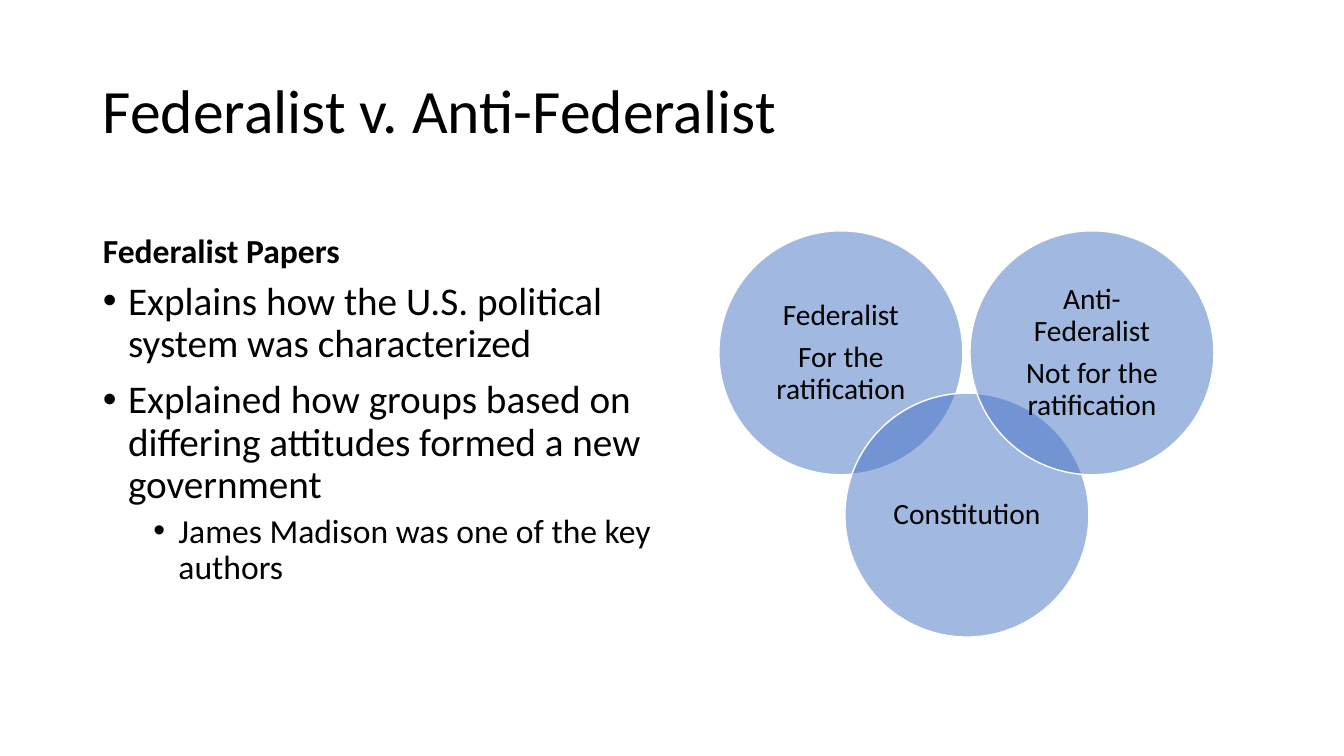
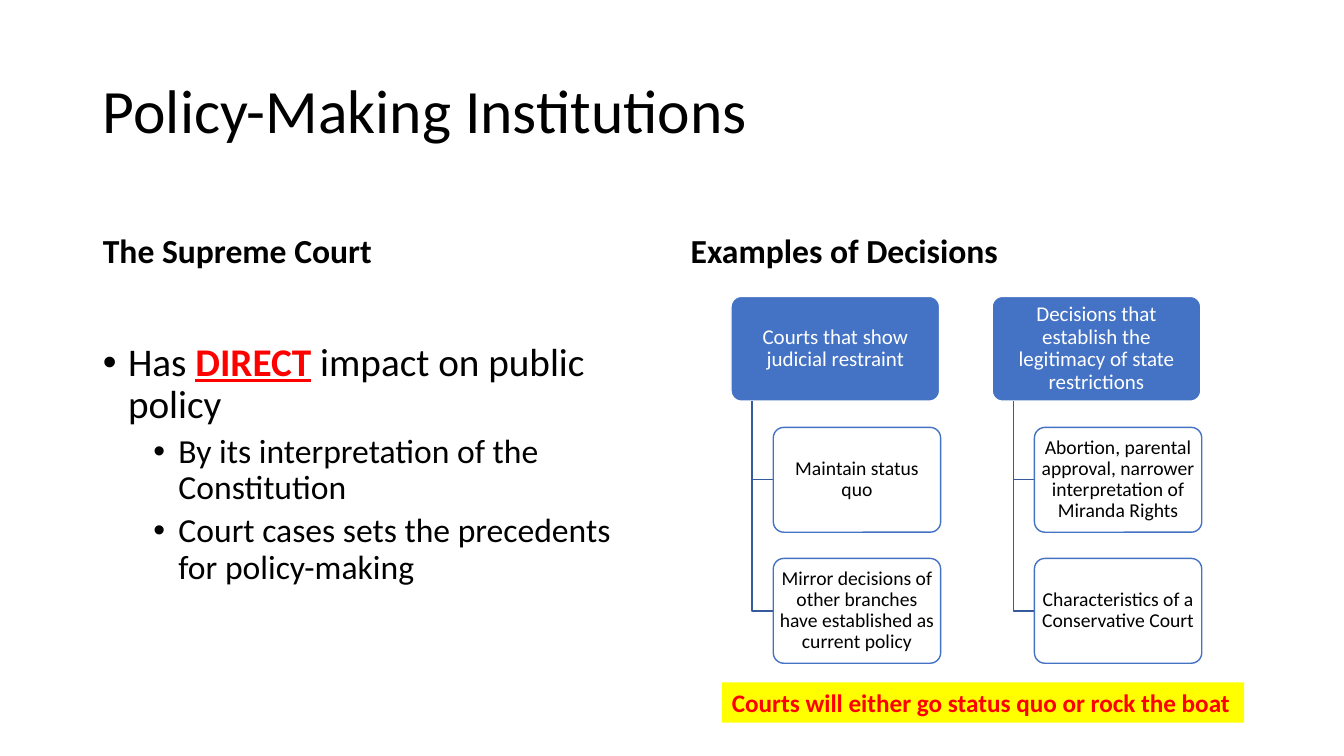
from lxml.etree import SubElement
from pptx import Presentation
from pptx.dml.color import RGBColor
from pptx.enum.shapes import MSO_SHAPE
from pptx.enum.text import MSO_ANCHOR, MSO_AUTO_SIZE, PP_ALIGN
from pptx.oxml.ns import qn
from pptx.util import Pt

PX = 9144  # EMU in one px, 100 px to the inch
BLUE, NAVY, WHITE, BLACK = "4472C4", "365B9D", "FFFFFF", "000000"
RED, YELLOW = "FF0000", "FFFF00"
FONT = "Calibri"

TITLE, HEAD, LIST, HEAD2 = range(4)  # placeholder numbers of the layout
PLACES = {
    TITLE: (92, 40, 1150, 145),
    HEAD: (92, 184, 564, 90),
    LIST: (92, 274, 564, 403),
    HEAD2: (675, 184, 567, 90),
}
LEVELS = [  # size, space before, indent of each list level
    {"size": 28, "before": 10, "left": 25},
    {"size": 24, "before": 5, "left": 75},
]
HANG = 25


def color(code):
    return RGBColor.from_string(code)


def assign(item, values):
    for name, value in values.items():
        setattr(item, name, value)


def move(shape, box):
    sides = ("left", "top", "width", "height")
    assign(shape, {side: n * PX for side, n in zip(sides, box)})


def write(para, text, size, ink=BLACK, **style):
    run = para.add_run()
    run.text = text
    assign(run.font, {"name": FONT, "size": Pt(size), **style})
    run.font.color.rgb = color(ink)


def bullet(para, left):
    props = para._p.get_or_add_pPr()
    props.set("marL", str(left * PX))
    props.set("indent", str(-HANG * PX))
    SubElement(props, qn("a:buFont"), typeface="Arial")
    SubElement(props, qn("a:buChar"), char="•")


def label(slide, number, text, size, **style):
    """Fill a one-line title or heading placeholder."""
    frame = slide.placeholders[number].text_frame
    frame.auto_size = MSO_AUTO_SIZE.NONE
    para = frame.paragraphs[0]
    assign(para, {"alignment": PP_ALIGN.LEFT, "line_spacing": 0.9,
                  "space_before": Pt(0)})
    write(para, text, size, **style)


def fill_list(slide, items, top):
    """Fill the list with (level, runs), each run a text and its style."""
    holder = slide.placeholders[LIST]
    left, start, width, height = PLACES[LIST]
    move(holder, (left, top, width, start + height - top))
    frame = holder.text_frame
    frame.auto_size = MSO_AUTO_SIZE.NONE
    for n, (level, runs) in enumerate(items):
        para = frame.add_paragraph() if n else frame.paragraphs[0]
        rule = LEVELS[level]
        assign(para, {"level": level, "line_spacing": 0.9,
                      "space_before": Pt(rule["before"])})
        bullet(para, rule["left"])
        for text, style in runs:
            write(para, text, rule["size"], **style)


def add_page(deck, title, head, items, top=PLACES[LIST][1], head2=None):
    slide = deck.slides.add_slide(deck.slide_layouts[4])
    label(slide, TITLE, title, 44)
    label(slide, HEAD, head, 24, bold=True)
    fill_list(slide, items, top)
    if head2:
        label(slide, HEAD2, head2, 24, bold=True)
    for holder in list(slide.placeholders):
        if not holder.text_frame.text:
            holder._element.getparent().remove(holder._element)
    return slide


def add_node(slide, kind, box, fill, line, alpha=100):
    shape = slide.shapes.add_shape(kind, *(n * PX for n in box))
    shape.shadow.inherit = False
    shape.fill.solid()
    shape.fill.fore_color.rgb = color(fill)
    if alpha < 100:
        tint = shape._element.spPr.find(qn("a:solidFill"))[0]
        SubElement(tint, qn("a:alpha"), val=str(alpha * 1000))
    if line:
        shape.line.color.rgb = color(line)
        shape.line.width = Pt(1)
    else:
        shape.line.fill.background()
    return shape


def center(shape, lines, size, ink, pad):
    """Write centred paragraphs with (side, end) insets in px."""
    side, end = (n * PX for n in pad)
    frame = shape.text_frame
    assign(frame, {"word_wrap": True, "vertical_anchor": MSO_ANCHOR.MIDDLE,
                   "margin_left": side, "margin_right": side,
                   "margin_top": end, "margin_bottom": end})
    for n, text in enumerate(lines):
        para = frame.add_paragraph() if n else frame.paragraphs[0]
        assign(para, {"alignment": PP_ALIGN.CENTER, "line_spacing": 0.9,
                      "space_after": Pt(0.35 * size)})
        write(para, text, size, ink)


def add_circle(slide, left, top, lines):
    shape = add_node(slide, MSO_SHAPE.OVAL, (left, top, 242, 242),
                     BLUE, WHITE, 50)
    center(shape, lines, 21, BLACK, (9, 9))


def add_card(slide, box, text, size, ink, **look):
    shape = add_node(slide, MSO_SHAPE.ROUNDED_RECTANGLE, box, **look)
    shape.adjustments[0] = 0.1
    center(shape, [text], size, ink, (3, 2))


def add_branch(slide, left, top, right, end):
    pen = slide.shapes.build_freeform(left, top, scale=PX)
    pen.add_line_segments([(left, end), (right, end)], close=False)
    shape = pen.convert_to_shape()
    shape.shadow.inherit = False
    shape.fill.background()
    shape.line.color.rgb = color(NAVY)
    shape.line.width = Pt(1)


def add_tree(slide, left, head, leaves):
    top, high, step = 294, 104, 130
    add_card(slide, (left, top, 207, high), head, 15, WHITE,
             fill=BLUE, line=WHITE)
    for n, text in enumerate(leaves, 1):
        y = top + n * step
        add_branch(slide, left + 21, top + high, left + 42, y + high // 2)
        add_card(slide, (left + 42, y, 166, high), text, 14, BLACK,
                 fill=WHITE, line=BLUE, alpha=90)


def add_banner(slide, box, text):
    shape = add_node(slide, MSO_SHAPE.RECTANGLE, box, YELLOW, None)
    frame = shape.text_frame
    assign(frame, {"word_wrap": False, "vertical_anchor": MSO_ANCHOR.TOP})
    para = frame.paragraphs[0]
    para.alignment = PP_ALIGN.LEFT
    write(para, text, 18, RED, bold=True)


def add_debate(deck):
    slide = add_page(deck, "Federalist v. Anti-Federalist",
                     "Federalist Papers", [
        (0, [("Explains how the U.S. political system was characterized", {})]),
        (0, [("Explained how groups based on differing attitudes formed "
              "a new government", {})]),
        (1, [("James Madison was one of the key authors", {})]),
    ])
    add_circle(slide, 713, 229, ["Federalist", "For the ratification"])
    add_circle(slide, 838, 390, ["Constitution"])
    add_circle(slide, 962, 229, ["Anti-Federalist", "Not for the ratification"])


def add_court(deck):
    alert = {"ink": RED, "bold": True, "underline": True}
    slide = add_page(deck, "Policy-Making Institutions",
                     "The Supreme Court", [
        (0, [("Has ", {}), ("DIRECT", alert),
             (" impact on public policy", {})]),
        (1, [("By its interpretation of the Constitution", {})]),
        (1, [("Court cases sets the precedents for policy-making", {})]),
    ], top=335, head2="Examples of Decisions")
    trees = [
        ("Courts that show judicial restraint",
         ["Maintain status quo",
          "Mirror decisions of other branches have established as "
          "current policy"]),
        ("Decisions that establish the legitimacy of state restrictions",
         ["Abortion, parental approval, narrower interpretation of "
          "Miranda Rights",
          "Characteristics of a Conservative Court"]),
    ]
    for n, (head, leaves) in enumerate(trees):
        add_tree(slide, 725 + n * 259, head, leaves)
    add_banner(slide, (716, 677, 518, 40),
               "Courts will either go status quo or rock the boat")


def main():
    deck = Presentation()
    assign(deck, {"slide_width": 1333 * PX, "slide_height": 750 * PX})
    for holder in deck.slide_layouts[4].placeholders:
        number = holder.placeholder_format.idx
        if number in PLACES:
            move(holder, PLACES[number])
    add_debate(deck)
    add_court(deck)
    deck.save("out.pptx")


if __name__ == "__main__":
    main()
